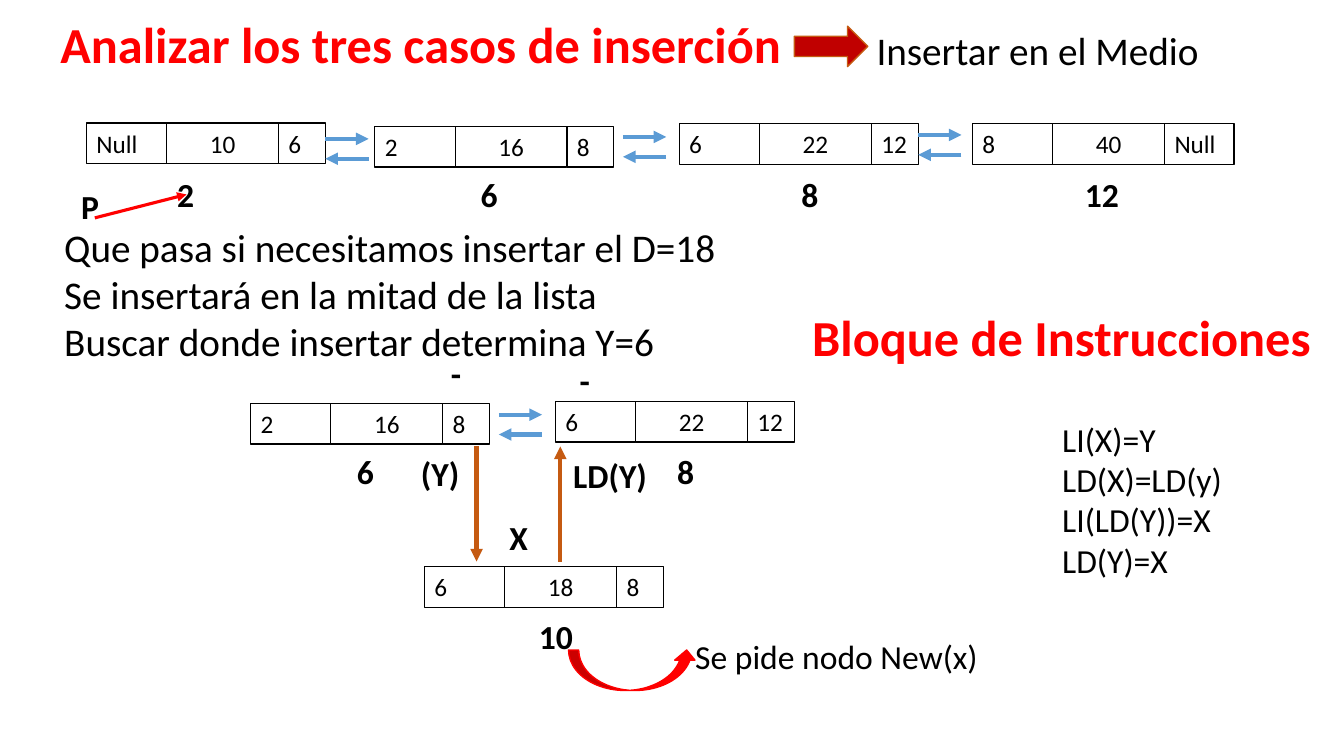
from pptx import Presentation, util as u
from pptx.dml.color import RGBColor
from pptx.enum import shapes, text
from pptx.oxml.ns import qn
from lxml import etree

BLACK = RGBColor(0, 0, 0)
RED = RGBColor(0xFF, 0, 0)
DARK_RED = RGBColor(0xC0, 0, 0)
BLUE = RGBColor(0x5B, 0x9B, 0xD5)
ORANGE = RGBColor(0xC5, 0x5A, 0x11)
LEFT, CENTER = text.PP_ALIGN.LEFT, text.PP_ALIGN.CENTER
LEFT_WIDTH, DATA_WIDTH, RIGHT_WIDTH = 2.02, 2.82, 1.18
CELL_HEIGHT = 1.03
LINK_LENGTH, LINK_GAP = 1.09, 0.5


def place(box, left, top, width, height):
    box.left, box.top = u.Cm(left), u.Cm(top)
    box.width, box.height = u.Cm(width), u.Cm(height)


def write(box, lines, size, color=BLACK, bold=False, align=LEFT):
    frame = box.text_frame
    frame.word_wrap = True
    frame.vertical_anchor = text.MSO_ANCHOR.TOP
    frame.text = "\n".join(lines)
    for para in frame.paragraphs:
        para.alignment = align
        para.font.name = "Calibri"
        para.font.size = u.Pt(size)
        para.font.bold = bold
        para.font.color.rgb = color


def add_text(page, place_at, lines, size, **style):
    box = page.shapes.add_textbox(*map(u.Cm, place_at))
    write(box, lines, size, **style)
    return box


def add_label(page, left, top, caption, width=1.8):
    add_text(page, (left, top, width, 1.27), [caption], 24, bold=True, align=CENTER)


def add_bullet_text(page, place_at, caption, size):
    box = page.shapes.add_textbox(*map(u.Cm, place_at))
    para_format = box.text_frame.paragraphs[0]._p.get_or_add_pPr()
    para_format.set("marL", str(u.Cm(1.27)))
    para_format.set("indent", str(-u.Cm(1.27)))
    etree.SubElement(para_format, qn("a:buFont")).set("typeface", "Arial")
    etree.SubElement(para_format, qn("a:buChar")).set("char", "•")
    write(box, [caption], size)


def add_node(page, left, top, values, right_width=RIGHT_WIDTH):
    widths = (LEFT_WIDTH, DATA_WIDTH, right_width)
    for value, width, align in zip(values, widths, (LEFT, CENTER, LEFT)):
        cell = add_text(page, (left, top, width, CELL_HEIGHT), [value], 18, align=align)
        cell.line.color.rgb = BLACK
        cell.line.width = u.Pt(0.75)
        left += width


def add_arrow(page, start, end, color, weight=3):
    arrow = page.shapes.add_connector(
        shapes.MSO_CONNECTOR.STRAIGHT, *map(u.Cm, start + end))
    arrow.line.color.rgb = color
    arrow.line.width = u.Pt(weight)
    etree.SubElement(arrow.line._get_or_add_ln(), qn("a:tailEnd")).set("type", "triangle")
    etree.SubElement(arrow._element.spPr, qn("a:effectLst"))


def add_double_link(page, left, top):
    right, bottom = left + LINK_LENGTH, top + LINK_GAP
    add_arrow(page, (left, top), (right, top), BLUE)
    add_arrow(page, (right, bottom), (left, bottom), BLUE)


def add_block_arrow(page, kind, place_at, fill, line):
    arrow = page.shapes.add_shape(kind, *map(u.Cm, place_at))
    arrow.shadow.inherit = False
    arrow.fill.solid()
    arrow.fill.fore_color.rgb = fill
    arrow.line.color.rgb = line
    arrow.line.width = u.Pt(1)


def add_list(page):
    add_node(page, 2.18, 3.1, ("Null", "10", "6"))
    add_node(page, 9.45, 3.18, ("2", "16", "8"))
    add_node(page, 17.12, 3.12, ("6", "22", "12"))
    add_node(page, 24.51, 3.12, ("8", "40", "Null"), right_width=1.75)
    for left, top in ((8.2, 3.5), (15.7, 3.45), (23.14, 3.4)):
        add_double_link(page, left, top)
    for left, address in ((3.78, "2"), (11.43, "6"), (19.51, "8"), (26.87, "12")):
        add_label(page, left, 4.27, address)
    add_label(page, 1.37, 4.55, "P")
    add_arrow(page, (2.39, 5.49), (4.7, 4.9), RED, 2.25)


def add_insertion(page):
    add_node(page, 6.32, 10.16, ("2", "16", "8"))
    add_node(page, 14, 10.11, ("6", "22", "12"))
    add_node(page, 10.7, 14.27, ("6", "18", "8"))
    add_double_link(page, 12.57, 10.45)
    add_label(page, 8.31, 11.25, "6")
    add_label(page, 16.38, 11.25, "8")
    add_label(page, 13.11, 15.39, "10")
    add_label(page, 10.19, 11.28, "(Y)")
    add_label(page, 14.12, 11.33, "LD(Y)", width=2.51)
    add_label(page, 12.17, 12.9, "X")
    add_label(page, 10.59, 8.76, "-")
    add_label(page, 13.84, 8.94, "-")
    add_arrow(page, (12.01, 11.25), (12.01, 14.15), ORANGE)
    add_arrow(page, (14.12, 14.15), (14.12, 11.25), ORANGE)
    add_block_arrow(page, shapes.MSO_SHAPE.CURVED_UP_ARROW,
                    (14.33, 16.38, 3.23, 1.02), RED, RED)
    add_text(page, (17.27, 15.9, 9.35, 1.27), ["Se pide nodo New(x)"], 24)


def main():
    deck = Presentation()
    deck.slide_width, deck.slide_height = u.Cm(33.87), u.Cm(19.05)
    page = deck.slides.add_slide(deck.slide_layouts[5])

    title = page.shapes.title
    place(title, 1.27, 0.2, 18.95, 1.8)
    write(title, ["Analizar los tres casos de inserción"], 36, color=RED, bold=True)
    add_block_arrow(page, shapes.MSO_SHAPE.RIGHT_ARROW,
                    (20.02, 0.66, 1.85, 1.02), DARK_RED, ORANGE)
    add_bullet_text(page, (21.84, 0.53, 11.18, 1.45), "Insertar en el Medio", 28)

    add_list(page)
    add_text(page, (1.37, 5.49, 31.09, 3.84), [
        "Que pasa si necesitamos insertar el D=18",
        "Se insertará en la mitad de la lista",
        "Buscar donde insertar determina Y=6"], 28)
    add_insertion(page)

    add_text(page, (20.22, 7.59, 13.51, 1.8), ["Bloque de Instrucciones"], 36,
             color=RED, bold=True)
    add_text(page, (26.52, 10.42, 5.08, 4.36), [
        "LI(X)=Y", "LD(X)=LD(y)", "LI(LD(Y))=X", "LD(Y)=X"], 24)
    deck.save("out.pptx")


if __name__ == "__main__":
    main()
